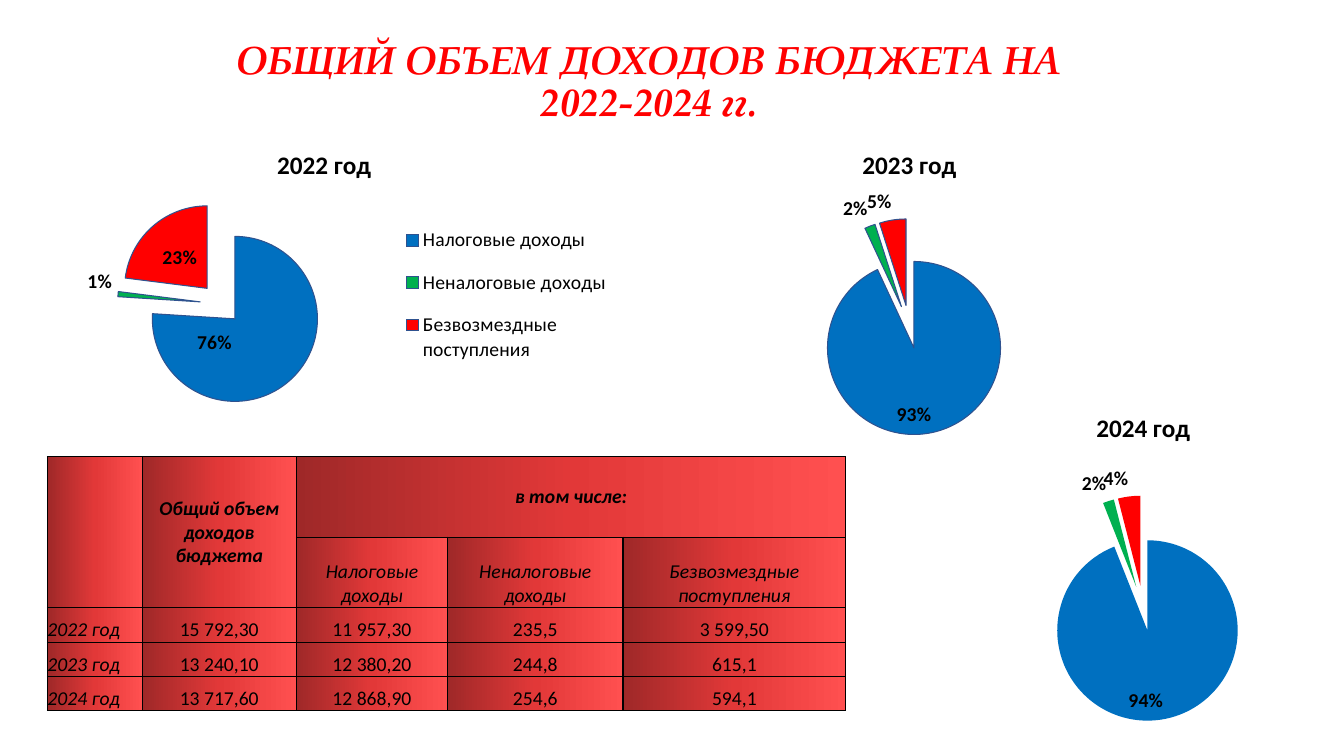
from dataclasses import dataclass

from pptx import Presentation
from pptx.chart.data import CategoryChartData
from pptx.dml.color import RGBColor
from pptx.enum.chart import XL_CHART_TYPE as CT, XL_LABEL_POSITION as LP, XL_LEGEND_POSITION
from pptx.enum.text import MSO_ANCHOR as ANCHOR, PP_ALIGN as ALIGN
from pptx.oxml import parse_xml
from pptx.oxml.ns import nsdecls, qn
from pptx.util import Inches, Pt


@dataclass(frozen=True)
class Theme:
    title_font: str = "TeX Gyre Pagella"
    body_font: str = "Calibri"
    title_size: float = 27.9
    chart_title_size: int = 18
    body_size: int = 14
    title_color: str = "FF0000"
    text_color: str = "000000"
    slice_colors: tuple = ("0070C0", "00B050", "FF0000")
    slice_line: str = "2F528F"
    cell_stops: tuple = ((0, "9F2828"), (50, "E23838"), (100, "FF5050"))


def put(obj, values):
    for name, value in values.items():
        setattr(obj, name, value)


def layout_xml(x, y, w=None, h=None, target=""):
    """Manual chart layout; without a size it is an offset from the default place."""
    parts = [f'<c:layoutTarget val="{target}"/>'] if target else []
    if w:
        parts += ['<c:xMode val="edge"/>', '<c:yMode val="edge"/>']
    parts += [f'<c:{tag} val="{v}"/>' for tag, v in zip("xywh", (x, y, w, h)) if v is not None]
    return parse_xml(f'<c:layout {nsdecls("c")}><c:manualLayout>{"".join(parts)}'
                     '</c:manualLayout></c:layout>')


def set_layout(parent, index, layout):
    for old in parent.findall(qn("c:layout")):
        parent.remove(old)
    parent.insert(index, layout)


class Deck:
    """Places elements on one slide; all lengths are percent of the slide's size."""

    def __init__(self, theme):
        self.theme = theme
        self.prs = Presentation()
        put(self.prs, {"slide_width": Inches(13.33), "slide_height": Inches(7.5)})
        self.slide = self.prs.slides.add_slide(self.prs.slide_layouts[6])

    def across(self, share):
        return int(self.prs.slide_width * share / 100)

    def down(self, share):
        return int(self.prs.slide_height * share / 100)

    def box(self, x, y, w, h):
        return self.across(x), self.down(y), self.across(w), self.down(h)

    def style(self, font, size=None, color=None, **extra):
        t = self.theme
        put(font, {"name": t.body_font, "size": Pt(size or t.body_size), **extra})
        font.color.rgb = RGBColor.from_string(color or t.text_color)

    def title(self, place, lines):
        """lines: pairs of text and letter spacing in hundredths of a point."""
        t = self.theme
        tf = self.slide.shapes.add_textbox(*self.box(*place)).text_frame
        put(tf, {"word_wrap": True, "vertical_anchor": ANCHOR.MIDDLE})
        p = tf.paragraphs[0]
        put(p, {"alignment": ALIGN.CENTER, "line_spacing": 0.9})
        for i, (text, spacing) in enumerate(lines):
            if i:
                p.add_line_break()
            r = p.add_run()
            r.text = text
            self.style(r.font, t.title_size, t.title_color,
                       name=t.title_font, bold=True, italic=True)
            r.font._element.set("spc", str(spacing))

    def pie(self, place, name, cats, values, plot, positions,
            legend=None, offsets=None, outline=True):
        t = self.theme
        data = CategoryChartData()
        data.categories = cats
        data.add_series(name, values)
        chart = self.slide.shapes.add_chart(CT.PIE, *self.box(*place), data).chart
        self.style(chart.font, 10)
        put(chart, {"has_title": True, "has_legend": legend is not None})
        r = chart.chart_title.text_frame.paragraphs[0].add_run()
        r.text = name
        self.style(r.font, t.chart_title_size, bold=True)
        if legend:
            put(chart.legend, {"position": XL_LEGEND_POSITION.RIGHT, "include_in_layout": False})
            self.style(chart.legend.font)
            set_layout(chart.legend._element, 1, layout_xml(*legend))

        chart.plots[0].vary_by_categories = True
        series = chart.plots[0].series[0]
        self.style(series.data_labels.font, bold=True)
        for i, (color, position) in enumerate(zip(t.slice_colors, positions)):
            point = series.points[i]
            point.format.fill.solid()
            point.format.fill.fore_color.rgb = RGBColor.from_string(color)
            if outline:
                point.format.line.width = Pt(0.75)
                point.format.line.color.rgb = RGBColor.from_string(t.slice_line)
            else:
                point.format.line.fill.background()
            self.style(point.data_label.font, bold=True)
            point.data_label.position = position

        ser = series._element
        ser.find(qn("c:dPt")).addprevious(
            parse_xml(f'<c:explosion {nsdecls("c")} val="25"/>'))
        for tag, shown in (("c:showVal", "0"), ("c:showPercent", "1")):
            for flag in ser.iter(qn(tag)):
                flag.set("val", shown)
        labels = list(ser.iter(qn("c:dLbl")))
        for i, offset in (offsets or {}).items():
            set_layout(labels[i], 1, layout_xml(*offset))
        area = next(chart._chartSpace.iter(qn("c:plotArea")))
        set_layout(area, 0, layout_xml(*plot, target="inner"))

    def cell_look(self, cell):
        """Black 1 pt borders and the left-to-right gradient."""
        t = self.theme
        put(cell, {f"margin_{side}": 0 for side in ("left", "right", "top", "bottom")})
        tc_pr = cell._tc.get_or_add_tcPr()
        for side in "LRTB":
            tc_pr.append(parse_xml(
                f'<a:ln{side} {nsdecls("a")} w="12700"><a:solidFill>'
                f'<a:srgbClr val="{t.text_color}"/></a:solidFill></a:ln{side}>'))
        stops = "".join(f'<a:gs pos="{pos * 1000}"><a:srgbClr val="{color}"/></a:gs>'
                        for pos, color in t.cell_stops)
        tc_pr.append(parse_xml(f'<a:gradFill {nsdecls("a")}><a:gsLst>{stops}</a:gsLst>'
                               '<a:lin ang="0" scaled="0"/></a:gradFill>'))

    def table(self, x, y, widths, heights, rows, merges):
        place = self.box(x, y, sum(widths), sum(heights))
        table = self.slide.shapes.add_table(len(heights), len(widths), *place).table
        put(table, {"first_row": False, "horz_banding": False})
        for column, w in zip(table.columns, widths):
            column.width = self.across(w)
        for row, h in zip(table.rows, heights):
            row.height = self.down(h)
        for i, row in enumerate(rows):
            for j, text in enumerate(row):
                cell = table.cell(i, j)
                self.cell_look(cell)
                cell.vertical_anchor = ANCHOR.BOTTOM if i else ANCHOR.MIDDLE
                if text:
                    p = cell.text_frame.paragraphs[0]
                    p.alignment = ALIGN.CENTER if j else ALIGN.LEFT
                    r = p.add_run()
                    r.text = text
                    self.style(r.font, bold=i == 0, italic=i < 2 or j == 0)
        for first, last in merges:
            table.cell(*first).merge(table.cell(*last))


def main():
    deck = Deck(Theme())
    sources = ("Налоговые доходы", "Неналоговые доходы", "Безвозмездные поступления")
    numbers = ("1", "2", "3")
    outer = (LP.INSIDE_END, LP.OUTSIDE_END, LP.OUTSIDE_END)

    deck.title((5.18, 2.8, 86.27, 16.27),
               (("ОБЩИЙ ОБЪЕМ ДОХОДОВ БЮДЖЕТА НА", 50), ("2022-2024 гг.", 0)))
    deck.pie((1.5, 17.33, 45.24, 40.13), "2022 год", sources, (76, 1, 23),
             plot=(0.16, 0.23, 0.34, 0.68), positions=(LP.CENTER, LP.OUTSIDE_END, LP.CENTER),
             legend=(0.62, 0.26, 0.36, 0.56), offsets={0: (-0.08, -0.02)})
    deck.pie((45.31, 17.33, 44.71, 41.47), "2023 год", numbers, (94, 2, 5),
             plot=(0.08, 0.28, 0.84, 0.69), positions=outer)
    deck.pie((61.44, 52, 47.26, 45.2), "2024 год", numbers, (94, 2, 4),
             plot=(0.32, 0.3, 0.36, 0.66), positions=outer, outline=False)
    deck.table(3.53, 60.4, (7.05, 11.48, 11.25, 13.05, 16.58), (10.67, 7.6) + (4.53,) * 3,
               (("", "Общий объем доходов бюджета", "в том числе:", "", ""),
                ("", "", *sources),
                ("2022 год", "15 792,30", "11 957,30", "235,5", "3 599,50"),
                ("2023 год", "13 240,10", "12 380,20", "244,8", "615,1"),
                ("2024 год", "13 717,60", "12 868,90", "254,6", "594,1")),
               merges=(((0, 0), (1, 0)), ((0, 1), (1, 1)), ((0, 2), (0, 4))))
    deck.prs.save("out.pptx")


if __name__ == "__main__":
    main()
